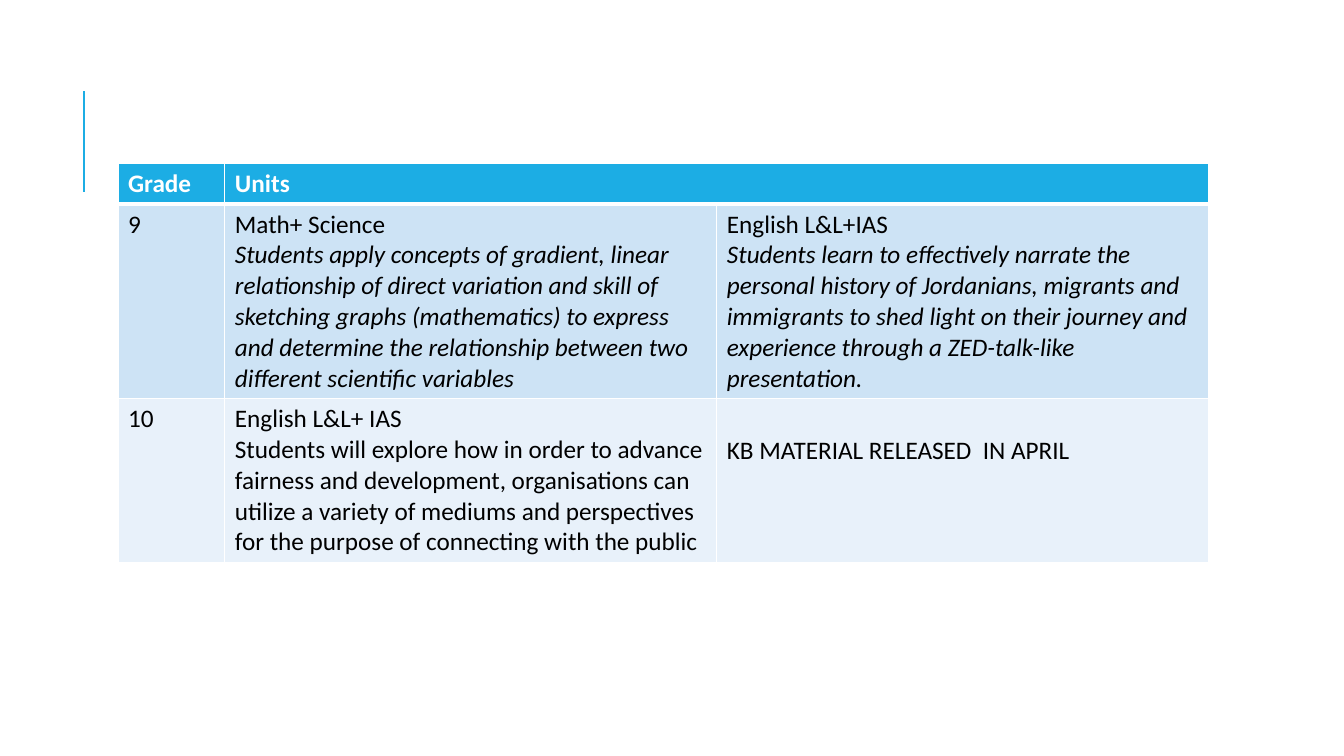
from lxml import etree
from pptx import Presentation
from pptx.dml.color import RGBColor
from pptx.enum.shapes import MSO_CONNECTOR
from pptx.oxml.ns import qn
from pptx.util import Inches, Pt

STRAIGHT = MSO_CONNECTOR.STRAIGHT
WHITE = RGBColor(0xFF, 0xFF, 0xFF)
BLACK = RGBColor(0x00, 0x00, 0x00)
ACCENT = RGBColor(0x1C, 0xAD, 0xE4)
BAND_DARK = RGBColor(0xCD, 0xE3, 0xF5)
BAND_LIGHT = RGBColor(0xE8, 0xF1, 0xFA)

# Each cell lists its paragraphs as (text, italic).
GRADE_UNITS = [
    [[("Grade", False)], [("Units", False)], []],
    [
        [("9", False)],
        [("Math+ Science", False),
         ("Students apply concepts of gradient, linear relationship of direct "
          "variation and skill of sketching graphs (mathematics) to express and "
          "determine the relationship between two different scientific variables", True)],
        [("English L&L+IAS", False),
         ("Students learn to effectively narrate the personal history of Jordanians, "
          "migrants and immigrants to shed light on their journey and experience "
          "through a ZED-talk-like presentation.", True)],
    ],
    [
        [("10", False)],
        [("English L&L+ IAS", False),
         ("Students will explore how in order to advance fairness and development, "
          "organisations can utilize a variety of mediums and perspectives for the "
          "purpose of connecting with the public", False)],
        [("KB MATERIAL RELEASED  IN APRIL", False)],
    ],
]
ROW_FILLS = [ACCENT, BAND_DARK, BAND_LIGHT]
COLUMN_WIDTHS = [1.06, 4.88, 4.88]
ROW_HEIGHTS = [0.4, 1.93, 1.62]
TABLE_LEFT, TABLE_TOP = 1.17, 1.62
RULE_X, RULE_TOP, RULE_BOTTOM = 0.83, 0.9, 1.9
THIN, THICK = 1, 3
ONE_LINE_DOWN = 0.36


def add_borders(cell, widths):
    """Put white borders, in points by side (L, R, T, B), ahead of the fill."""
    properties = cell._tc.get_or_add_tcPr()
    for position, (side, width) in enumerate(widths.items()):
        border = etree.Element(qn(f"a:ln{side}"), w=str(Pt(width)))
        fill = etree.SubElement(border, qn("a:solidFill"))
        etree.SubElement(fill, qn("a:srgbClr"), val=str(WHITE))
        properties.insert(position, border)


def write_cell(cell, paragraphs, is_header):
    frame = cell.text_frame
    for index, (text, italic) in enumerate(paragraphs):
        paragraph = frame.add_paragraph() if index else frame.paragraphs[0]
        run = paragraph.add_run()
        run.text = text
        run.font.color.rgb = WHITE if is_header else BLACK
        style = {"name": "Calibri", "size": Pt(18), "bold": is_header, "italic": italic}
        for attribute, value in style.items():
            setattr(run.font, attribute, value)


def add_side_rule(slide):
    rule = slide.shapes.add_connector(
        STRAIGHT, Inches(RULE_X), Inches(RULE_BOTTOM), Inches(RULE_X), Inches(RULE_TOP))
    rule.line.color.rgb = ACCENT
    rule.line.width = Pt(1.5)
    etree.SubElement(rule._element.spPr, qn("a:effectLst"))


def add_units_table(slide):
    table = slide.shapes.add_table(
        len(ROW_HEIGHTS), len(COLUMN_WIDTHS), Inches(TABLE_LEFT), Inches(TABLE_TOP),
        Inches(sum(COLUMN_WIDTHS)), Inches(sum(ROW_HEIGHTS))).table
    for column, width in zip(table.columns, COLUMN_WIDTHS):
        column.width = Inches(width)
    for row, height in zip(table.rows, ROW_HEIGHTS):
        row.height = Inches(height)
    table.cell(0, 1).merge(table.cell(0, 2))

    for r, (units, fill) in enumerate(zip(GRADE_UNITS, ROW_FILLS)):
        for c, paragraphs in enumerate(units):
            cell = table.cell(r, c)
            cell.fill.solid()
            cell.fill.fore_color.rgb = fill
            add_borders(cell, {"L": THIN, "R": THIN,
                               "T": THICK if r == 1 else THIN,
                               "B": THICK if r == 0 else THIN})
            write_cell(cell, paragraphs, is_header=r == 0)
    table.cell(2, 2).margin_top = Inches(ONE_LINE_DOWN)


def main():
    deck = Presentation()
    deck.slide_width, deck.slide_height = Inches(13.33), Inches(7.5)
    slide = deck.slides.add_slide(deck.slide_layouts[6])
    add_side_rule(slide)
    add_units_table(slide)
    deck.save("out.pptx")


if __name__ == "__main__":
    main()
